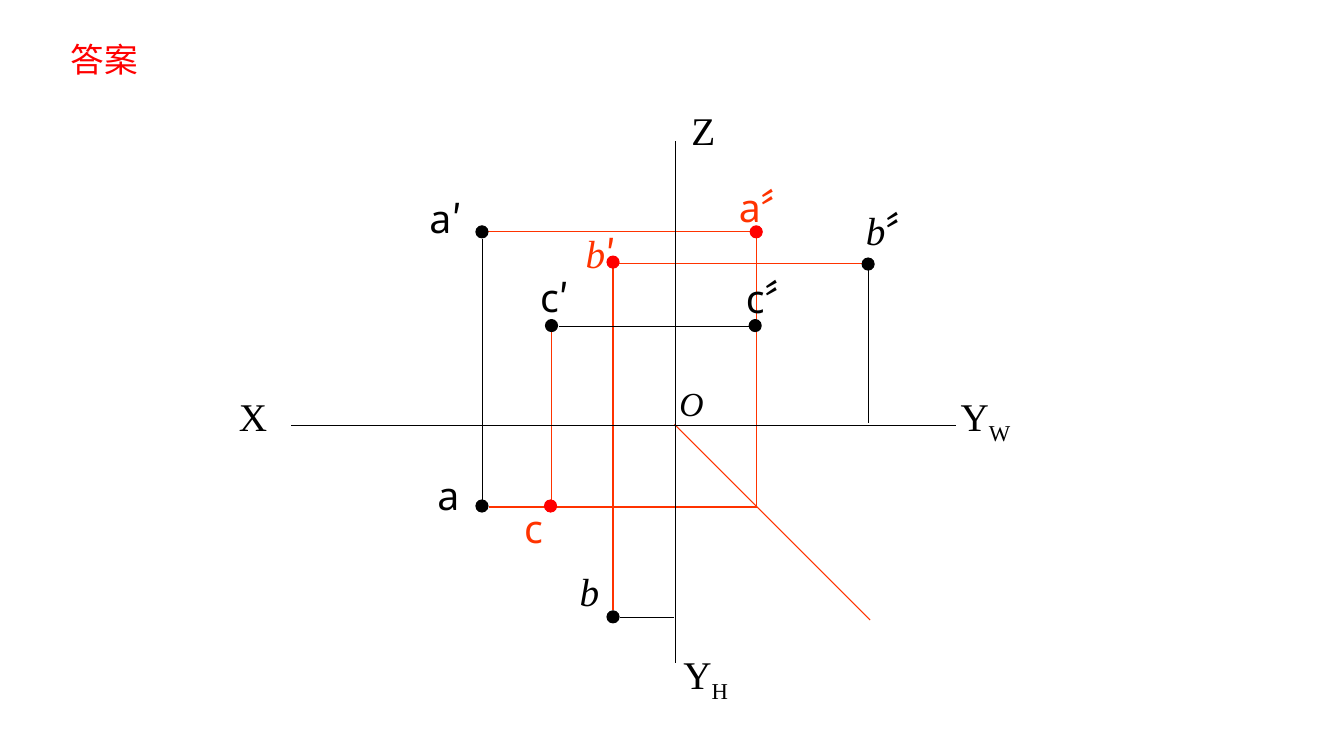
from lxml import etree
from pptx import Presentation
from pptx.dml.color import RGBColor
from pptx.enum import shapes, text
from pptx.oxml import ns
from pptx.util import Inches, Pt

RED = RGBColor(0xFF, 0x00, 0x00)
ORANGE = RGBColor(0xFF, 0x33, 0x00)
BLACK = RGBColor(0x00, 0x00, 0x00)
SANS, CJK, SERIF = "Noto Sans", "Noto Sans CJK SC", "Times New Roman"
DOT = 0.12

# Projection and axis lines: x1, y1, x2, y2
RED_LINES = [
    (7.5, 5.03, 7.5, 2.28),
    (6.69, 4.21, 8.63, 6.15),
    (4.84, 2.3, 7.49, 2.3),
    (4.85, 5.03, 7.51, 5.03),
    (5.47, 3.29, 5.47, 5.03),
    (6.08, 6.05, 6.08, 2.58),
    (8.55, 2.61, 6.05, 2.61),
]
BLACK_LINES = [
    (2.89, 4.22, 9.48, 4.22),
    (6.7, 1.4, 6.7, 6.58),
    (8.61, 2.67, 8.61, 4.2),
    (5.54, 3.24, 7.52, 3.24),
    (4.79, 2.37, 4.79, 4.97),
    (6.15, 6.13, 6.68, 6.13),
]

# Left and top of each point
RED_DOTS = [(7.44, 2.24), (5.4, 4.96), (6.02, 2.54)]
BLACK_DOTS = [(8.55, 2.56), (4.72, 2.24), (6.02, 6.06),
              (4.72, 4.96), (7.43, 3.17), (5.41, 3.17)]

# Point names: letter, mark, left, top, width
RED_NAMES = [
    ("a", "〞", 7.23, 1.77, 0.95),
    ("c", "", 5.1, 4.95, 0.95),
    ("b", "′", 5.71, 2.23, 0.95),
]
BLACK_NAMES = [
    ("a", "′", 4.16, 1.88, 1.18),
    ("a", "", 4.24, 4.63, 1.1),
    ("c", "′", 5.26, 2.66, 1.13),
    ("c", "〞", 7.3, 2.67, 1.24),
    ("b", "〞", 8.49, 2, 1.19),
    ("b", "", 5.65, 5.58, 1.12),
]

# Axis names: letter, subscript, left, top, width
AXES = [
    ("Z", "", 6.76, 1.01, 0.87),
    ("Y", "H", 6.68, 6.4, 1.09),
    ("Y", "W", 9.43, 3.84, 1.24),
    ("X", "", 2.27, 3.84, 0.79),
]


def add_run(para, words, size=28, font=SERIF, color=BLACK, italic=False, base=0):
    """Add a run; base is the baseline shift in percent."""
    run = para.add_run()
    run.text = words
    run.font.size = Pt(size)
    run.font.name = font
    run.font.italic = italic
    run.font.color.rgb = color
    props = run._r.get_or_add_rPr()
    if base:
        props.set("baseline", str(base * 1000))
    if font == CJK:
        etree.SubElement(props, ns.qn("a:ea"), typeface=font)


def add_text(slide, words, left, top, width, height=0.57, wrap=True, **style):
    """Add a text box and return its paragraph for further runs."""
    box = slide.shapes.add_textbox(
        Inches(left), Inches(top), Inches(width), Inches(height))
    frame = box.text_frame
    frame.word_wrap = wrap
    frame.auto_size = text.MSO_AUTO_SIZE.SHAPE_TO_FIT_TEXT
    para = frame.paragraphs[0]
    add_run(para, words, **style)
    return para


def add_line(slide, ends, color):
    line = slide.shapes.add_connector(
        shapes.MSO_CONNECTOR.STRAIGHT, *[Inches(n) for n in ends])
    line.line.color.rgb = color
    line.line.width = Pt(0.75)
    etree.SubElement(line._element.spPr, ns.qn("a:effectLst"))


def add_dot(slide, left, top, color):
    dot = slide.shapes.add_shape(
        shapes.MSO_SHAPE.OVAL, Inches(left), Inches(top), Inches(DOT), Inches(DOT))
    dot.shadow.inherit = False
    dot.fill.solid()
    dot.fill.fore_color.rgb = color
    dot.line.color.rgb = color
    dot.line.width = Pt(0.75)


def add_name(slide, letter, mark, left, top, width, color):
    """Name a point; b is set in serif italics, a and c in sans."""
    serif = letter == "b"
    para = add_text(slide, letter, left, top, width, color=color,
                    font=SERIF if serif else SANS, italic=serif)
    if mark:
        add_run(para, mark, font=CJK, color=color)


def add_layer(slide, lines, dots, names, ink, fill):
    for ends in lines:
        add_line(slide, ends, ink)
    for left, top in dots:
        add_dot(slide, left, top, fill)
    for name in names:
        add_name(slide, *name, color=ink)


def main():
    deck = Presentation()
    deck.slide_width, deck.slide_height = Inches(13.33), Inches(7.5)
    slide = deck.slides.add_slide(deck.slide_layouts[6])
    add_text(slide, "答案", 0.6, 0.34, 0.88, 0.5, wrap=False,
             size=24, font=CJK, color=RED)
    add_layer(slide, RED_LINES, RED_DOTS, RED_NAMES, ORANGE, RED)
    add_layer(slide, BLACK_LINES, BLACK_DOTS, BLACK_NAMES, BLACK, BLACK)
    for letter, sub, left, top, width in AXES:
        para = add_text(slide, letter, left, top, width)
        if sub:
            add_run(para, sub, base=-25)
    add_text(slide, "O", 6.64, 3.75, 0.55, 0.5, size=24, italic=True)
    deck.save("out.pptx")


if __name__ == "__main__":
    main()
